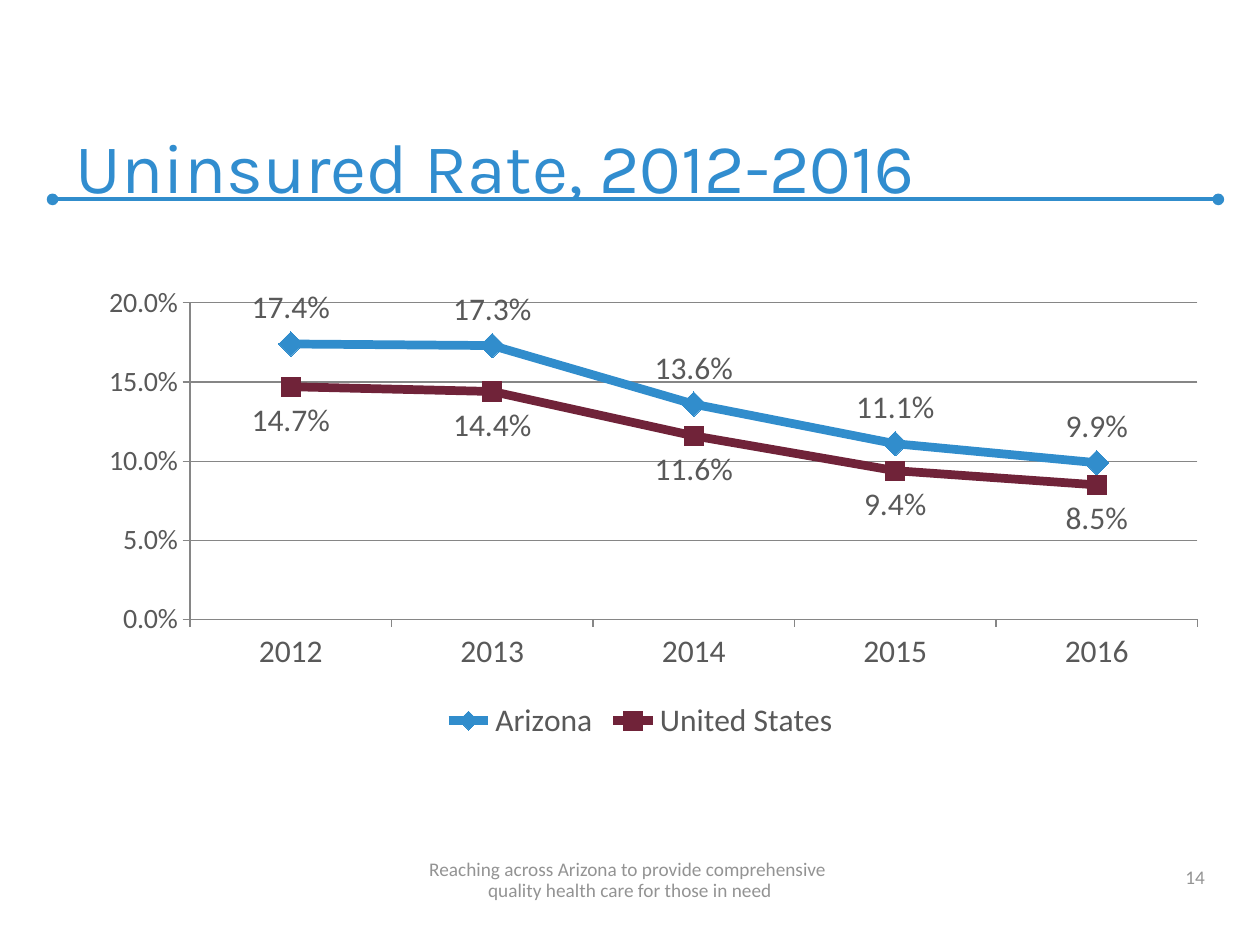
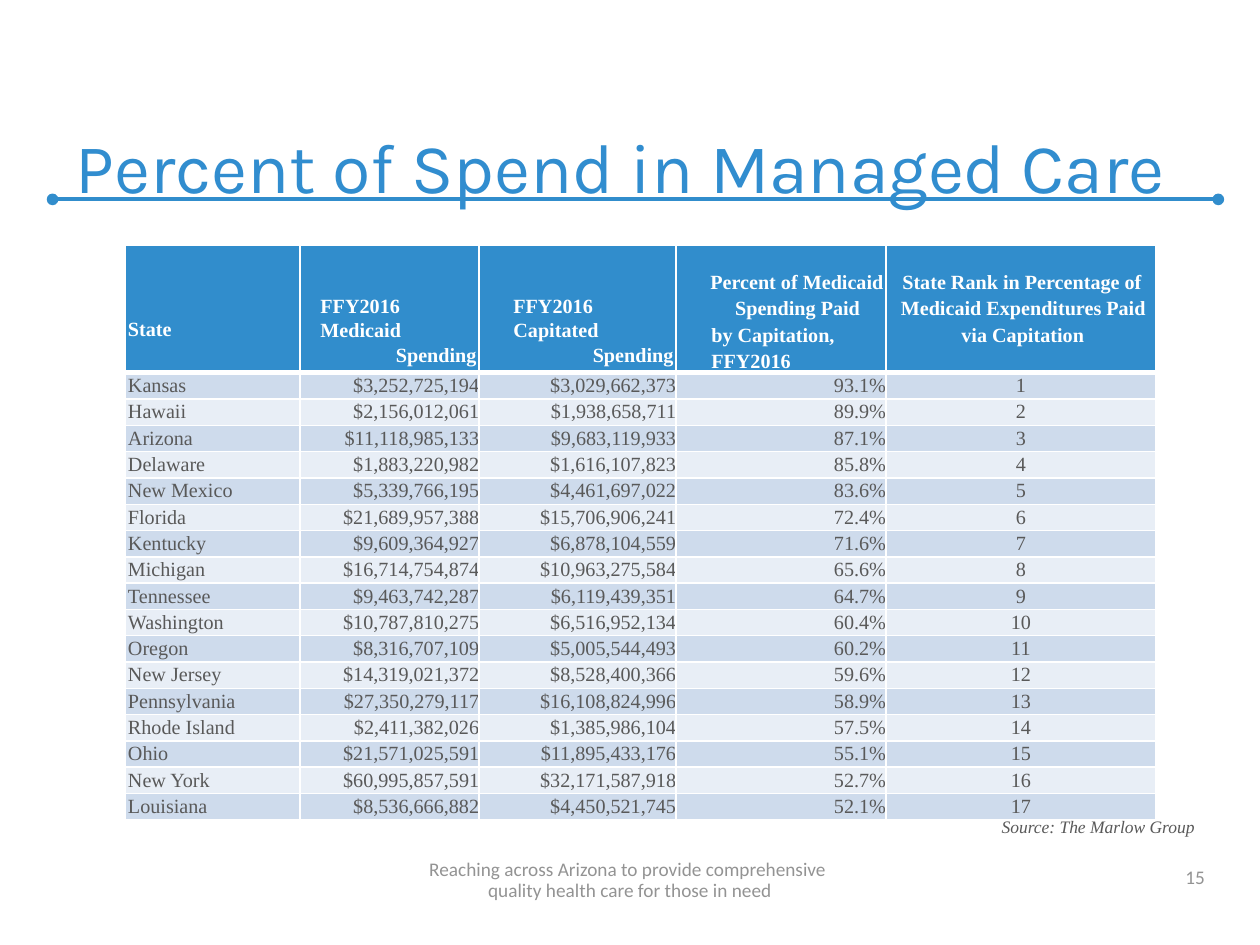
import pptx
import pptx.chart.data
import pptx.dml.color
import pptx.enum.chart
import pptx.enum.shapes
import pptx.enum.text
import pptx.oxml
import pptx.oxml.ns
import pptx.util
from lxml import etree

Cm, Pt = pptx.util.Cm, pptx.util.Pt
ALIGN = pptx.enum.text.PP_ALIGN
ANCHOR = pptx.enum.text.MSO_ANCHOR
qn = pptx.oxml.ns.qn

# Shared look
BLUE, TITLE_BLUE, MAROON = "318DCC", "318DCF", "702339"
TEXT_GREY, FOOTER_GREY, AXIS_GREY, WHITE = "595959", "939393", "868686", "FFFFFF"
BANDS = ("CEDBEC", "E8EEF6")
TITLE_FONT, BODY_FONT, TABLE_FONT = "Karla", "Calibri", "Times New Roman"
FOOTER = "Reaching across Arizona to provide comprehensive \vquality health care for those in need"

# Uninsured rate
YEARS = ("2012", "2013", "2014", "2015", "2016")
MARKER = pptx.enum.chart.XL_MARKER_STYLE
LABEL = pptx.enum.chart.XL_LABEL_POSITION
RATES = (
    ("Arizona", (0.174, 0.173, 0.136, 0.111, 0.099), BLUE, MARKER.DIAMOND, 14, LABEL.ABOVE),
    ("United States", (0.147, 0.144, 0.116, 0.094, 0.085), MAROON, MARKER.SQUARE, 11, LABEL.BELOW),
)

# Managed care spending
COLUMN_WIDTHS = (3.52, 3.61, 3.97, 4.23, 5.44)
# Per column: top inset in points, then (text, left indent cm, first line cm, line pt, space before pt)
HEADERS = (
    (41.5, [("State", 0.05, 0, 13.1, 0)]),
    (27.5, [("FFY2016 Medicaid", 0.41, 0, 13.7, 0), ("Spending", 1.93, 0, 13.4, 1.2)]),
    (27.5, [("FFY2016 Capitated", 0.69, 0, 13.7, 0), ("Spending", 2.29, 0, 13.4, 1.2)]),
    (13.7, [("Percent of Medicaid", 1.19, -0.5, 13.7, 0),
            ("Spending Paid by Capitation, FFY2016", 0.71, 0.48, 15, 0.3)]),
    (13.7, [("State Rank in Percentage of", 0.3, 0.03, 13.7, 0),
            ("Medicaid Expenditures Paid via Capitation", 1.52, -1.22, 15, 0.3)]),
)
STATES = (
    ("Kansas", "$3,252,725,194", "$3,029,662,373", "93.1%"),
    ("Hawaii", "$2,156,012,061", "$1,938,658,711", "89.9%"),
    ("Arizona", "$11,118,985,133", "$9,683,119,933", "87.1%"),
    ("Delaware", "$1,883,220,982", "$1,616,107,823", "85.8%"),
    ("New Mexico", "$5,339,766,195", "$4,461,697,022", "83.6%"),
    ("Florida", "$21,689,957,388", "$15,706,906,241", "72.4%"),
    ("Kentucky", "$9,609,364,927", "$6,878,104,559", "71.6%"),
    ("Michigan", "$16,714,754,874", "$10,963,275,584", "65.6%"),
    ("Tennessee", "$9,463,742,287", "$6,119,439,351", "64.7%"),
    ("Washington", "$10,787,810,275", "$6,516,952,134", "60.4%"),
    ("Oregon", "$8,316,707,109", "$5,005,544,493", "60.2%"),
    ("New Jersey", "$14,319,021,372", "$8,528,400,366", "59.6%"),
    ("Pennsylvania", "$27,350,279,117", "$16,108,824,996", "58.9%"),
    ("Rhode Island", "$2,411,382,026", "$1,385,986,104", "57.5%"),
    ("Ohio", "$21,571,025,591", "$11,895,433,176", "55.1%"),
    ("New York", "$60,995,857,591", "$32,171,587,918", "52.7%"),
    ("Louisiana", "$8,536,666,882", "$4,450,521,745", "52.1%"),
)
COLUMN_ALIGNS = (ALIGN.LEFT, ALIGN.RIGHT, ALIGN.RIGHT, ALIGN.RIGHT, ALIGN.CENTER)


def rgb(value):
    return pptx.dml.color.RGBColor.from_string(value)


def set_font(font, name, size, color, bold=False, italic=False):
    font.name, font.size = name, Pt(size)
    font.bold, font.italic = bold, italic
    font.color.rgb = rgb(color)


def set_line(line, color, width):
    line.color.rgb = rgb(color)
    line.width = Pt(width)


def add_text(slide, text, box, font, size, color, align, anchor=ANCHOR.BOTTOM,
             italic=False, line_spacing=None):
    tf = slide.shapes.add_textbox(*map(Cm, box)).text_frame
    tf.word_wrap = True
    tf.vertical_anchor = anchor
    tf.text = text
    p = tf.paragraphs[0]
    p.alignment = align
    if line_spacing:
        p.line_spacing = Pt(line_spacing)
    for r in p.runs:
        set_font(r.font, font, size, color, italic=italic)


def add_title_rule(slide):
    line = slide.shapes.add_connector(pptx.enum.shapes.MSO_CONNECTOR.STRAIGHT,
                                      Cm(1.06), Cm(4.02), Cm(24.56), Cm(4.02))
    set_line(line.line, BLUE, 2.25)
    ln = line.line._get_or_add_ln()
    for end in ("a:headEnd", "a:tailEnd"):
        etree.SubElement(ln, qn(end), type="oval")
    etree.SubElement(line._element.spPr, qn("a:effectLst"))


def add_slide(prs, title, number):
    slide = prs.slides.add_slide(prs.slide_layouts[5])
    add_title_rule(slide)
    sp = slide.shapes.title
    sp.left, sp.top, sp.width, sp.height = map(Cm, (1.27, 0.84, 23.06, 3.38))
    tf = sp.text_frame
    tf.text = title
    tf.word_wrap = True
    tf.auto_size = pptx.enum.text.MSO_AUTO_SIZE.NONE
    tf.vertical_anchor = ANCHOR.BOTTOM
    tf.margin_bottom = Cm(0.03)
    p = tf.paragraphs[0]
    p.alignment = ALIGN.LEFT
    set_font(p.runs[0].font, TITLE_FONT, 40, TITLE_BLUE)
    add_text(slide, str(number), (18.62, 17.22, 5.92, 0.81), BODY_FONT, 11,
             FOOTER_GREY, ALIGN.RIGHT)
    add_text(slide, FOOTER, (0, 17.22, 25.4, 1.07), BODY_FONT, 11,
             FOOTER_GREY, ALIGN.CENTER, line_spacing=12)
    return slide


def set_plot_area(chart, x, y, w, h):
    plot_area = chart._chartSpace.chart.plotArea
    for old in plot_area.findall(qn("c:layout")):
        plot_area.remove(old)
    layout = etree.Element(qn("c:layout"))
    manual = etree.SubElement(layout, qn("c:manualLayout"))
    settings = (("layoutTarget", "inner"), ("xMode", "edge"), ("yMode", "edge"),
                ("x", x), ("y", y), ("w", w), ("h", h))
    for tag, value in settings:
        etree.SubElement(manual, qn("c:" + tag), val=str(value))
    plot_area.insert(0, layout)


def add_rate_chart(slide):
    data = pptx.chart.data.CategoryChartData(number_format="0.0%")
    data.categories = YEARS
    for name, values, *_ in RATES:
        data.add_series(name, values)
    chart = slide.shapes.add_chart(pptx.enum.chart.XL_CHART_TYPE.LINE_MARKERS,
                                   Cm(1.27), Cm(5.08), Cm(23.29), Cm(9.96), data).chart
    chart.has_title = False
    set_font(chart.font, BODY_FONT, 18, TEXT_GREY)
    set_plot_area(chart, 0.11, 0.103, 0.872, 0.641)
    chart.has_legend = True
    chart.legend.position = pptx.enum.chart.XL_LEGEND_POSITION.BOTTOM
    chart.legend.include_in_layout = False
    set_font(chart.legend.font, BODY_FONT, 18, TEXT_GREY)

    # Axes
    for axis, size in ((chart.category_axis, 18), (chart.value_axis, 16)):
        axis.major_tick_mark = pptx.enum.chart.XL_TICK_MARK.OUTSIDE
        set_line(axis.format.line, AXIS_GREY, 0.75)
        set_font(axis.tick_labels.font, BODY_FONT, size, TEXT_GREY)
    rate_axis = chart.value_axis
    rate_axis.minimum_scale, rate_axis.maximum_scale, rate_axis.major_unit = 0, 0.2, 0.05
    rate_axis.tick_labels.number_format = "0.0%"
    rate_axis.tick_labels.number_format_is_linked = False
    rate_axis.has_major_gridlines = True
    set_line(rate_axis.major_gridlines.format.line, AXIS_GREY, 0.75)

    # Series
    chart.plots[0].vary_by_categories = False
    for series, (_, _, color, style, size, position) in zip(chart.plots[0].series, RATES):
        series.smooth = False
        set_line(series.format.line, color, 5)
        marker = series.marker
        marker.style, marker.size = style, size
        marker.format.fill.solid()
        marker.format.fill.fore_color.rgb = rgb(color)
        marker.format.line.fill.background()
        labels = series.data_labels
        labels.show_value = True
        labels.position = position
        labels.number_format, labels.number_format_is_linked = "0.0%", False
        set_font(labels.font, BODY_FONT, 18, TEXT_GREY)


def format_cell(cell, fill, top_inset, bottom_border=1):
    cell.margin_left = cell.margin_right = cell.margin_bottom = 0
    cell.margin_top = Pt(top_inset)
    tc_pr = cell._tc.get_or_add_tcPr()
    for side, width in (("L", 1), ("R", 1), ("T", 1), ("B", bottom_border)):
        ln = etree.SubElement(tc_pr, qn("a:ln" + side), w=str(Pt(width)))
        solid = etree.SubElement(ln, qn("a:solidFill"))
        etree.SubElement(solid, qn("a:srgbClr"), val=WHITE)
    cell.fill.solid()
    cell.fill.fore_color.rgb = rgb(fill)


def format_paragraph(p, color, bold, line_pt, left=0, first=0, before=0, align=ALIGN.LEFT):
    p.alignment = align
    p.line_spacing = Pt(line_pt)
    if before:
        p.space_before = Pt(before)
    p_pr = p._p.get_or_add_pPr()
    p_pr.set("marL", str(Cm(left)))
    p_pr.set("indent", str(Cm(first)))
    for r in p.runs:
        set_font(r.font, TABLE_FONT, 11.5, color, bold)


def add_spending_table(slide):
    header_height, row_height = 2.52, 0.53
    table = slide.shapes.add_table(
        len(STATES) + 1, len(HEADERS), Cm(2.53), Cm(4.95), Cm(sum(COLUMN_WIDTHS)),
        Cm(header_height + row_height * len(STATES))).table
    for column, width in zip(table.columns, COLUMN_WIDTHS):
        column.width = Cm(width)
    for i, row in enumerate(table.rows):
        row.height = Cm(row_height if i else header_height)

    # Header row
    for col, (top_inset, lines) in enumerate(HEADERS):
        cell = table.cell(0, col)
        format_cell(cell, BLUE, top_inset, bottom_border=3)
        cell.text_frame.text = "\n".join(line[0] for line in lines)
        for p, (_, left, first, line_pt, before) in zip(cell.text_frame.paragraphs, lines):
            format_paragraph(p, WHITE, True, line_pt, left, first, before)

    # One row per state, ranked from 1
    for rank, state in enumerate(STATES, 1):
        for col, text in enumerate((*state, str(rank))):
            cell = table.cell(rank, col)
            format_cell(cell, BANDS[(rank - 1) % 2], 0.8)
            cell.text_frame.text = text
            format_paragraph(cell.text_frame.paragraphs[0], TEXT_GREY, False, 13.1,
                             left=0 if col else 0.05, align=COLUMN_ALIGNS[col])


def main():
    prs = pptx.Presentation()
    prs.slide_width, prs.slide_height = Cm(25.4), Cm(19.05)

    slide = add_slide(prs, "Uninsured Rate, 2012-2016", 14)
    add_rate_chart(slide)

    slide = add_slide(prs, "Percent of Spend in Managed Care", 15)
    add_spending_table(slide)
    add_text(slide, "Source: The Marlow Group", (11.63, 16.33, 12.7, 0.69), TABLE_FONT, 10,
             TEXT_GREY, ALIGN.RIGHT, ANCHOR.TOP, italic=True)

    prs.save("out.pptx")


if __name__ == "__main__":
    main()
